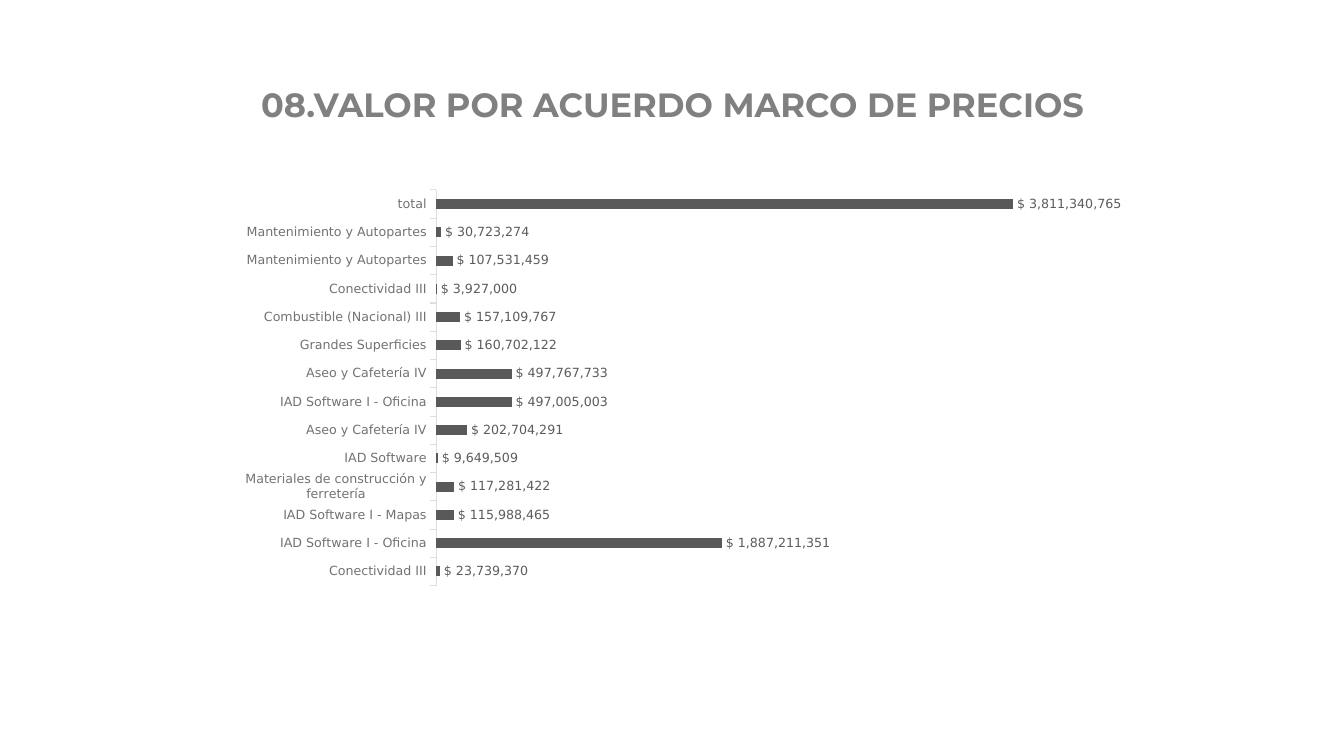
from lxml import etree
from pptx import Presentation
from pptx.chart.data import CategoryChartData
from pptx.dml.color import RGBColor
from pptx.enum.chart import XL_CHART_TYPE, XL_LABEL_POSITION, XL_TICK_MARK
from pptx.enum.text import MSO_ANCHOR, PP_ALIGN
from pptx.util import Inches, Pt

BAR = XL_CHART_TYPE.BAR_CLUSTERED
OUT_END = XL_LABEL_POSITION.OUTSIDE_END
TICK_OUT, TICK_NONE = XL_TICK_MARK.OUTSIDE, XL_TICK_MARK.NONE
BOTTOM, CENTER = MSO_ANCHOR.BOTTOM, PP_ALIGN.CENTER

COLORS = {"title": "808080", "bar": "595959", "label": "5C5C5C",
          "axis": "727272", "line": "DEDEDE", "text": "262626"}
MONEY = r"[$$-240A]\ #,##0"
DEALS = [
    ("Conectividad III", 23739370),
    ("IAD Software I - Oficina", 1887211351),
    ("IAD Software I - Mapas", 115988465),
    ("Materiales de construcción y ferretería", 117281422),
    ("IAD Software", 9649509),
    ("Aseo y Cafetería IV", 202704291),
    ("IAD Software I - Oficina", 497005003),
    ("Aseo y Cafetería IV", 497767733),
    ("Grandes Superficies", 160702122),
    ("Combustible (Nacional) III", 157109767),
    ("Conectividad III", 3927000),
    ("Mantenimiento y Autopartes", 107531459),
    ("Mantenimiento y Autopartes", 30723274),
    ("total", 3811340765),
]


def color(name):
    return RGBColor.from_string(COLORS[name])


def style(font, face, size, name):
    font.name = face
    font.size = Pt(size)
    font.color.rgb = color(name)


prs = Presentation()
prs.slide_width, prs.slide_height = Inches(13.33), Inches(7.5)
slide = prs.slides.add_slide(prs.slide_layouts[6])

# Title
box = slide.shapes.add_textbox(Inches(0.92), Inches(0.77), Inches(11.5), Inches(0.52))
frame = box.text_frame
frame.word_wrap = True
frame.vertical_anchor = BOTTOM
para = frame.paragraphs[0]
para.alignment = CENTER
para.line_spacing = 0.9
run = para.add_run()
run.text = "08.VALOR POR ACUERDO MARCO DE PRECIOS"
style(run.font, "Montserrat", 24, "title")
run.font.bold = True

# Chart
data = CategoryChartData(number_format=MONEY)
data.categories = [name for name, value in DEALS]
data.add_series("Series 1", [value for name, value in DEALS])
chart = slide.shapes.add_chart(BAR, Inches(2.12), Inches(1.83), Inches(9.09),
                               Inches(4.23), data).chart
chart.has_title = False
chart.has_legend = False
style(chart.font, "DejaVu Sans", 10, "text")

# Axes
cats = chart.category_axis
cats.major_tick_mark, cats.minor_tick_mark = TICK_OUT, TICK_NONE
cats.has_major_gridlines = False
cats.format.line.color.rgb = color("line")
cats.format.line.width = Pt(0.75)
style(cats.tick_labels.font, "DejaVu Sans", 9, "axis")
vals = chart.value_axis
vals.has_major_gridlines = False
vals.minimum_scale, vals.maximum_scale = 0, 4500000000
vals.tick_labels.number_format = MONEY
vals.tick_labels.number_format_is_linked = False
vals.visible = False

# Bars and their labels
plot = chart.plots[0]
plot.gap_width = 182
plot.vary_by_categories = False
fill = plot.series[0].format.fill
fill.solid()
fill.fore_color.rgb = color("bar")
plot.has_data_labels = True
labels = plot.data_labels
labels.show_value = True
labels.position = OUT_END
labels.number_format = MONEY
labels.number_format_is_linked = False
style(labels.font, "DejaVu Sans", 9, "label")

# Fixed inner plot area
C = "{http://schemas.openxmlformats.org/drawingml/2006/chart}"
area = chart.element.find(f".//{C}plotArea")
for old in area.findall(f"{C}layout"):
    area.remove(old)
layout = etree.Element(f"{C}layout")
area.insert(0, layout)
manual = etree.SubElement(layout, f"{C}manualLayout")
for tag, val in [("layoutTarget", "inner"), ("xMode", "edge"), ("yMode", "edge"),
                 ("x", "0.243"), ("y", "0.013"), ("w", "0.743"), ("h", "0.928")]:
    etree.SubElement(manual, f"{C}{tag}", val=val)

prs.save("out.pptx")
